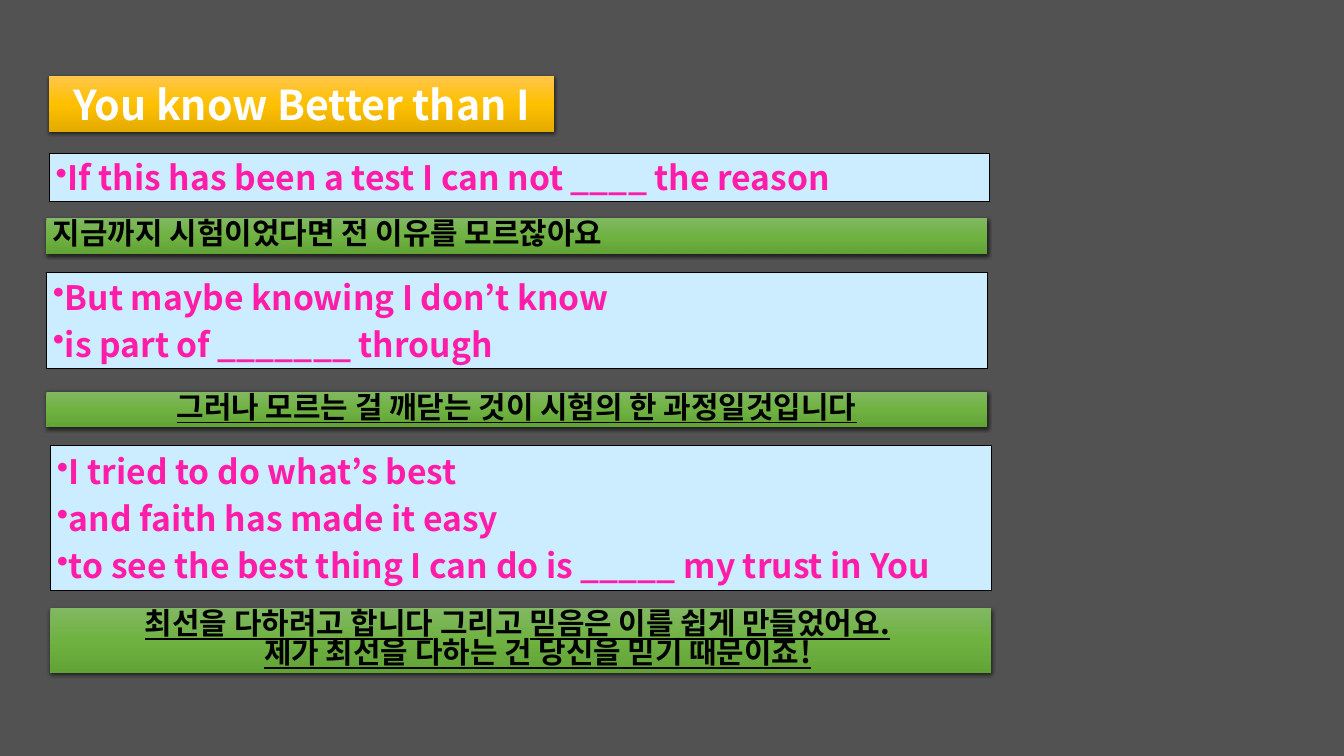
import pptx
import pptx.util
import pptx.dml.color
import pptx.enum.shapes
import pptx.enum.text
import pptx.oxml.ns
from lxml import etree

PX = 9144
WIDTH, HEIGHT = 2000, 1125
BACKGROUND = "525252"
FONT = "Noto Sans CJK KR"
ALIGN = pptx.enum.text.PP_ALIGN
ANCHOR = pptx.enum.text.MSO_ANCHOR

STYLES = {
    "lyric": {
        "fill": "CCECFF", "border": "000000", "anchor": ANCHOR.MIDDLE,
        "font": {"size": pptx.util.Pt(36), "bold": True}, "color": "FF1CA8",
        "space_before": 20, "bullet": "•",
    },
    "translation": {
        "gradient": ["81B861", "6FB242", "62A336"], "anchor": ANCHOR.MIDDLE,
        "font": {"size": pptx.util.Pt(32), "bold": True}, "color": "000000",
        "space_before": 50, "line_spacing": 0.8, "hanging": 50,
    },
    "title": {
        "gradient": ["FFC64B", "FFC000", "E3AB00"], "anchor": ANCHOR.TOP,
        "font": {"size": pptx.util.Pt(44), "bold": True}, "color": "FFFFFF",
    },
}

PLAIN, UNDERLINED = False, True
BOXES = [
    ("lyric", (73, 228, 1400, 71), ALIGN.LEFT,
     [[[("If this has been a test I can not ____ the reason", PLAIN)]]]),
    ("translation", (69, 325, 1400, 53), ALIGN.LEFT,
     [[[("지금까지 시험이었다면 전 이유를 모르잖아요", PLAIN)]]]),
    ("lyric", (69, 405, 1400, 143), ALIGN.LEFT,
     [[[("But maybe knowing I don’t know", PLAIN)]],
      [[("is part of _______ through", PLAIN)]]]),
    ("translation", (69, 583, 1400, 53), ALIGN.CENTER,
     [[[("그러나 모르는 걸 깨닫는 것이 시험의 한 과정일것입니다", UNDERLINED)]]]),
    ("lyric", (75, 663, 1400, 216), ALIGN.LEFT,
     [[[("I tried to do what’s best", PLAIN)]],
      [[("and faith has made it easy", PLAIN)]],
      [[("to see the best thing I can do is _____ my trust in You", PLAIN)]]]),
    ("translation", (75, 905, 1400, 96), ALIGN.CENTER,
     [[[("최선을 다하려고 합니다", UNDERLINED), (" 그리고 ", PLAIN),
        ("믿음은 이를 쉽게 만들었어요.", UNDERLINED), (" ", PLAIN)],
       [("제가 최선을 다하는 건 당신을 믿기 때문이죠!", UNDERLINED)]]]),
    ("title", (73, 113, 752, 84), ALIGN.CENTER,
     [[[("You know Better than I", PLAIN)]]]),
]


def rgb(color):
    return pptx.dml.color.RGBColor.from_string(color)


def add_xml(parent, tag, **values):
    attributes = {key: str(value) for key, value in values.items()}
    return etree.SubElement(parent, pptx.oxml.ns.qn("a:" + tag), attributes)


def paint_gradient(box, colors):
    box.fill.gradient()
    box.fill.gradient_angle = 270
    stops = box.fill._xPr.find(".//" + pptx.oxml.ns.qn("a:gsLst"))
    stops.clear()
    for index, color in enumerate(colors):
        position = index * 100000 // (len(colors) - 1)
        add_xml(add_xml(stops, "gs", pos=position), "srgbClr", val=color)


def add_shadow(box):
    effects = box._element.spPr.find(pptx.oxml.ns.qn("a:effectLst"))
    shadow = add_xml(effects, "outerShdw", blurRad=pptx.util.Pt(4.5),
                     dist=pptx.util.Pt(1.5), dir=5400000, algn="ctr", rotWithShape=0)
    add_xml(add_xml(shadow, "srgbClr", val="000000"), "alpha", val=63000)


def format_paragraph(paragraph, style, alignment):
    paragraph.alignment = alignment
    properties = paragraph._p.get_or_add_pPr()
    if "hanging" in style:
        properties.set("marL", str(style["hanging"] * PX))
        properties.set("indent", str(-style["hanging"] * PX))
    if "line_spacing" in style:
        paragraph.line_spacing = style["line_spacing"]
    if "space_before" in style:
        spacing = add_xml(properties, "spcBef")
        add_xml(spacing, "spcPct", val=style["space_before"] * 1000)
    if "bullet" in style:
        add_xml(properties, "buChar", char=style["bullet"])


def add_words(paragraph, words, underline, style):
    run = paragraph.add_run()
    run.text = words
    for name, value in {**style["font"], "name": FONT, "underline": underline}.items():
        setattr(run.font, name, value)
    run.font.color.rgb = rgb(style["color"])
    add_xml(run._r.get_or_add_rPr(), "ea", typeface=FONT)


def add_box(slide, kind, place, alignment, paragraphs):
    style = STYLES[kind]
    box = slide.shapes.add_shape(
        pptx.enum.shapes.MSO_SHAPE.RECTANGLE, *(length * PX for length in place))
    box.shadow.inherit = False
    if "gradient" in style:
        paint_gradient(box, style["gradient"])
        box.line.fill.background()
        add_shadow(box)
    else:
        box.fill.solid()
        box.fill.fore_color.rgb = rgb(style["fill"])
        box.line.color.rgb = rgb(style["border"])
        box.line.width = pptx.util.Pt(0.75)
    frame = box.text_frame
    frame_format = {"word_wrap": True, "vertical_anchor": style["anchor"],
                    "auto_size": pptx.enum.text.MSO_AUTO_SIZE.SHAPE_TO_FIT_TEXT}
    for name, value in frame_format.items():
        setattr(frame, name, value)
    for index, lines in enumerate(paragraphs):
        paragraph = frame.add_paragraph() if index else frame.paragraphs[0]
        format_paragraph(paragraph, style, alignment)
        for line_index, line in enumerate(lines):
            if line_index:
                paragraph.add_line_break()
            for words, underline in line:
                add_words(paragraph, words, underline, style)


def main():
    deck = pptx.Presentation()
    deck.slide_width, deck.slide_height = WIDTH * PX, HEIGHT * PX
    slide = deck.slides.add_slide(deck.slide_layouts[6])
    slide.background.fill.solid()
    slide.background.fill.fore_color.rgb = rgb(BACKGROUND)
    for box in BOXES:
        add_box(slide, *box)
    deck.save("out.pptx")


if __name__ == "__main__":
    main()
